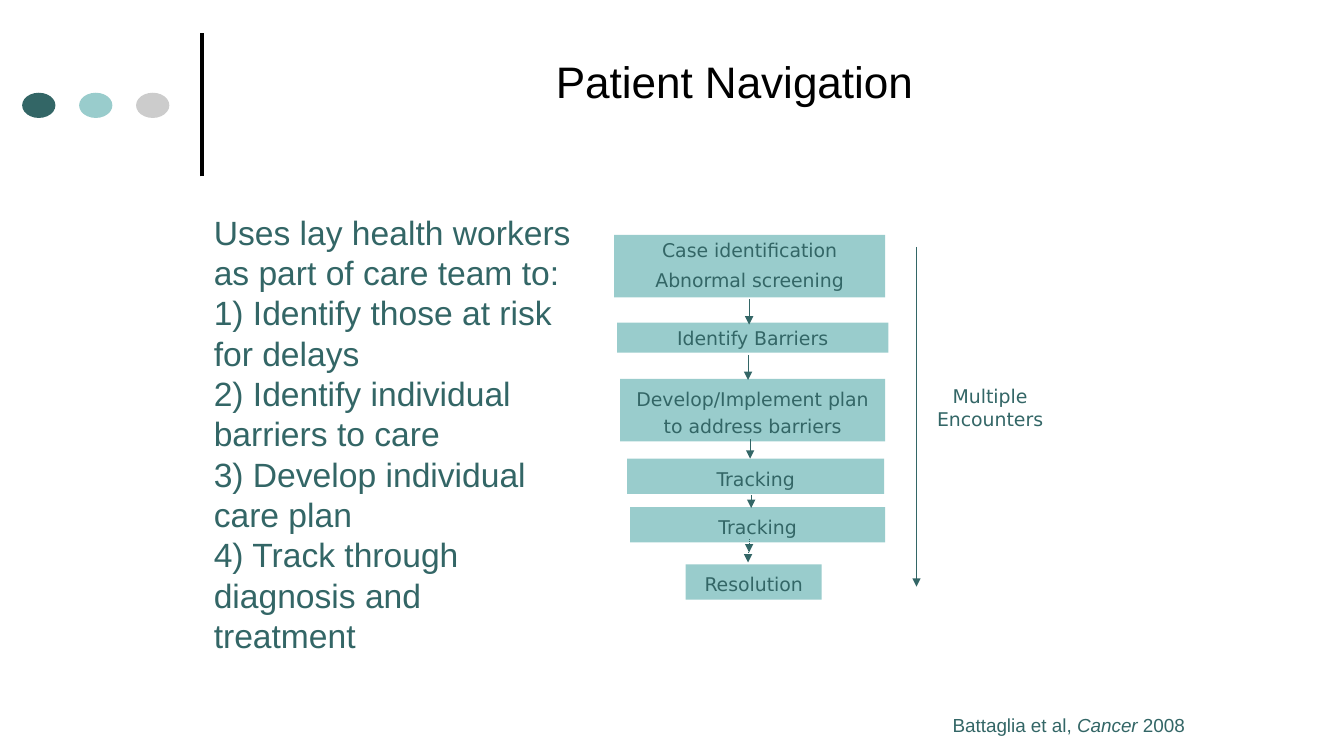
import pptx
import pptx.util
import pptx.dml.color
import pptx.enum.dml
import pptx.enum.shapes
import pptx.enum.text
import pptx.oxml.ns
import lxml.etree

COLORS = {"teal": "336666", "aqua": "99CCCC", "gray": "CCCCCC", "black": "000000"}
CELL = 0.1  # grid pitch in inches: columns and rows below count these cells
ALIGN = pptx.enum.text.PP_ALIGN
ANCHOR = pptx.enum.text.MSO_ANCHOR
AUTO_SIZE = pptx.enum.text.MSO_AUTO_SIZE
SHAPE = pptx.enum.shapes.MSO_SHAPE


def color(name):
    return pptx.dml.color.RGBColor.from_string(COLORS[name])


def cells(*counts):
    return [pptx.util.Inches(count * CELL) for count in counts]


def add_element(parent, tag, **attributes):
    return lxml.etree.SubElement(parent, pptx.oxml.ns.qn(tag), attributes)


class SlideBuilder:
    heading_font = "Arial"
    label_font = "DejaVu Sans"
    label_size = 13.5

    def __init__(self, slide):
        self.slide = slide

    def format(self, paragraph, font, size, align=ALIGN.LEFT, ink="teal", spacing=None):
        paragraph.alignment = align
        if spacing:
            paragraph.line_spacing = spacing
        paragraph.font.name = font
        paragraph.font.size = pptx.util.Pt(size)
        paragraph.font.color.rgb = color(ink)

    def place(self, shape, area):
        shape.left, shape.top, shape.width, shape.height = cells(*area)

    def title(self, text, area):
        shape = self.slide.shapes.title
        self.place(shape, area)
        frame = shape.text_frame
        frame.text = text
        frame.vertical_anchor = ANCHOR.MIDDLE
        self.format(frame.paragraphs[0], self.heading_font, 31.5, ALIGN.CENTER, "black")

    def body(self, items, area):
        shape = self.slide.placeholders[1]
        self.place(shape, area)
        frame = shape.text_frame
        frame.text = "\n".join(items)
        frame.auto_size = AUTO_SIZE.NONE
        for paragraph in frame.paragraphs:
            properties = paragraph._p.get_or_add_pPr()
            properties.set("marL", "0")
            properties.set("indent", "0")
            add_element(properties, "a:buNone")
            paragraph.space_before = pptx.util.Pt(0)
            self.format(paragraph, self.heading_font, 24)

    def shape(self, kind, area, fill):
        shape = self.slide.shapes.add_shape(kind, *cells(*area))
        shape.shadow.inherit = False
        shape.fill.solid()
        shape.fill.fore_color.rgb = color(fill)
        shape.line.fill.background()
        return shape

    def step(self, lines, area, spacings):
        frame = self.shape(SHAPE.RECTANGLE, area, "aqua").text_frame
        frame.margin_left = frame.margin_right = pptx.util.Inches(0.07)
        frame.margin_top = frame.margin_bottom = pptx.util.Inches(0.04)
        frame.vertical_anchor = ANCHOR.TOP
        frame.word_wrap = True
        frame.auto_size = AUTO_SIZE.SHAPE_TO_FIT_TEXT
        frame.text = "\n".join(lines)
        for index, paragraph in enumerate(frame.paragraphs):
            if index:
                paragraph.space_before = pptx.util.Pt(7)
            self.format(paragraph, self.label_font, self.label_size,
                        ALIGN.CENTER, spacing=spacings[index])

    def text(self, paragraphs, area, font, align=ALIGN.LEFT, wrap=True):
        """Each paragraph is a list of (text, italic) runs."""
        frame = self.slide.shapes.add_textbox(*cells(*area)).text_frame
        frame.word_wrap = wrap
        frame.auto_size = AUTO_SIZE.SHAPE_TO_FIT_TEXT
        for index, runs in enumerate(paragraphs):
            paragraph = frame.add_paragraph() if index else frame.paragraphs[0]
            self.format(paragraph, font, self.label_size, align)
            for text, italic in runs:
                run = paragraph.add_run()
                run.text = text
                if italic:
                    run.font.italic = True

    def line(self, column, top, bottom, ink="teal", width=0.75, arrow=True, dotted=False):
        connector = self.slide.shapes.add_connector(
            pptx.enum.shapes.MSO_CONNECTOR.STRAIGHT, *cells(column, top, column, bottom))
        connector.line.color.rgb = color(ink)
        connector.line.width = pptx.util.Pt(width)
        if dotted:
            connector.line.dash_style = pptx.enum.dml.MSO_LINE.ROUND_DOT
        if arrow:
            add_element(connector.line._get_or_add_ln(), "a:tailEnd", type="triangle")
        add_element(connector._element.spPr, "a:effectLst")


def main():
    presentation = pptx.Presentation()
    presentation.slide_width = pptx.util.Inches(13.33)
    presentation.slide_height = pptx.util.Inches(7.5)
    builder = SlideBuilder(presentation.slides.add_slide(presentation.slide_layouts[1]))

    # Header: rule, three dots and title
    builder.line(20, 17.5, 3.3, ink="black", width=3, arrow=False)
    for index, fill in enumerate(("teal", "aqua", "gray")):
        builder.shape(SHAPE.OVAL, (2.2 + 5.65 * index, 9.2, 3.3, 2.5), fill)
    builder.title("Patient Navigation", (41.3, 5, 63.1, 6.1))

    # Role of the lay health workers
    builder.body([
        "Uses lay health workers as part of care team to:",
        "1) Identify those at risk \tfor delays",
        "2) Identify individual \tbarriers to care",
        "3) Develop individual \tcare plan",
        "4) Track through \tdiagnosis and \ttreatment",
    ], (20.2, 20.5, 39.2, 45.4))

    # Flow chart steps: lines, area, line spacing of each line
    for lines, area, spacings in (
        (["Case identification", "Abnormal screening"], (60.9, 23.3, 26.9, 6.2), (None, 0.9)),
        (["Identify Barriers"], (61.2, 32, 26.9, 3), (None,)),
        (["Develop/Implement plan to address barriers"], (61.5, 37.6, 26.3, 6.2), (1.2,)),
        (["Tracking"], (62.2, 45.5, 25.5, 3.5), (1.2,)),
        (["Tracking"], (62.5, 50.3, 25.3, 3.5), (1.2,)),
        (["Resolution"], (68, 56, 13.5, 3.5), (1.2,)),
    ):
        builder.step(lines, area, spacings)

    # Arrows between steps, then the long one for the whole process
    for column, top, bottom, dotted in (
        (74.3, 29.7, 32.2, False),
        (74.2, 35.2, 37.7, False),
        (74.4, 43.6, 45.5, False),
        (74.5, 49.1, 50.4, False),
        (74.3, 53.5, 54.8, True),
        (74.2, 54.6, 55.8, True),
        (66.7, 55.6, 55.6, False),
        (90.9, 24.5, 58.2, False),
    ):
        builder.line(column, top, bottom, dotted=dotted)

    # Side label and citation
    builder.text([[("Multiple", False)], [("Encounters", False)]], (91.9, 37.7, 12.6, 5.6),
                 builder.label_font, ALIGN.CENTER, wrap=False)
    builder.text([[("Battaglia et al, ", False), ("Cancer", True), (" 2008", False)]],
                 (93.5, 70.3, 28.4, 3.3), builder.heading_font)

    presentation.save("out.pptx")


if __name__ == "__main__":
    main()
